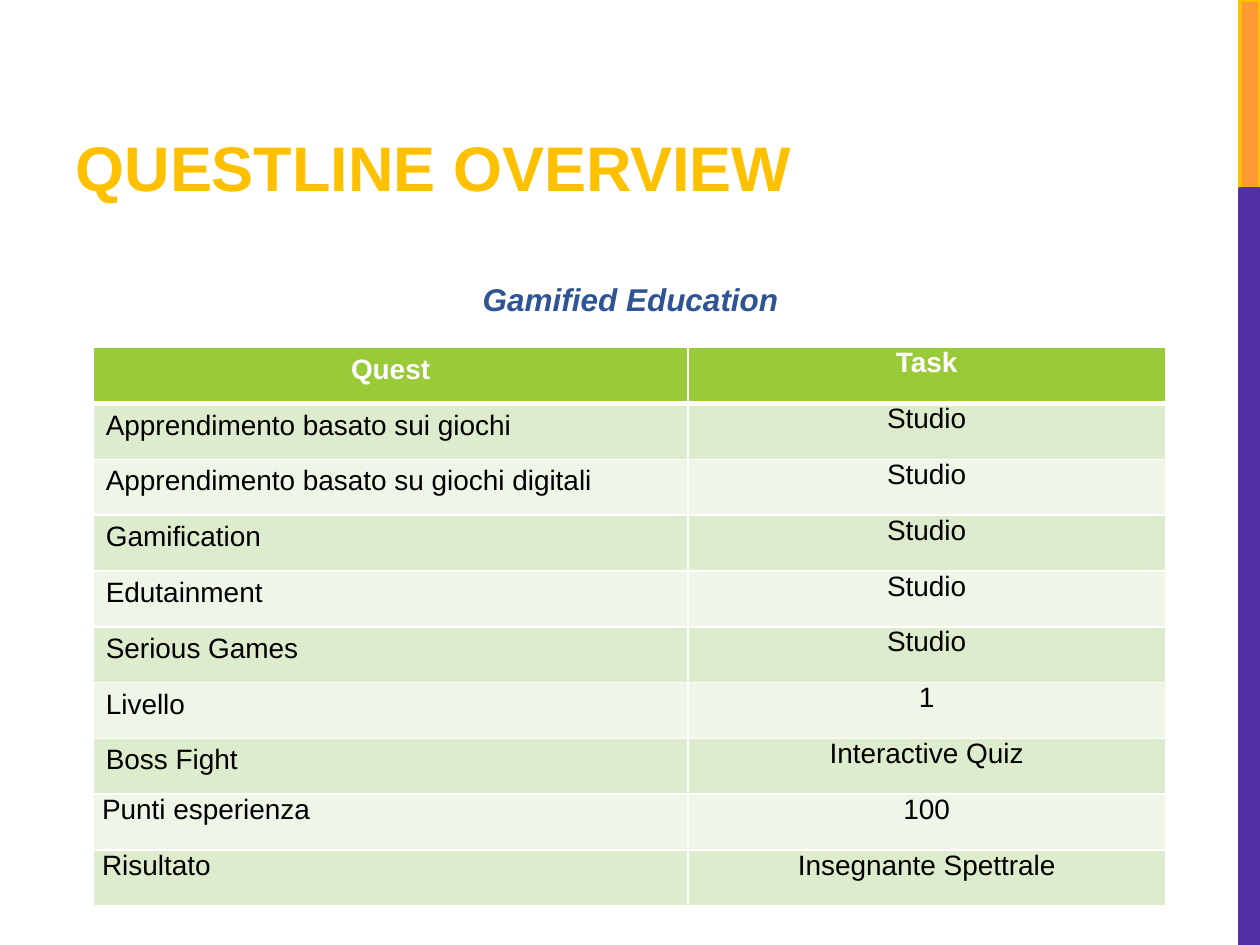
from lxml import etree
from pptx import Presentation
from pptx.dml.color import RGBColor
from pptx.enum import shapes, text
from pptx.oxml import ns
from pptx.util import Inches, Pt

FONT = "Arial"
WHITE = RGBColor(0xFF, 0xFF, 0xFF)
BLACK = RGBColor(0, 0, 0)
GOLD = RGBColor(0xFF, 0xC0, 0x00)
ORANGE = RGBColor(0xFF, 0x99, 0x33)
PURPLE = RGBColor(0x53, 0x30, 0xA5)
BLUE = RGBColor(0x2F, 0x54, 0x96)
GREEN = RGBColor(0x99, 0xCB, 0x38)
BANDS = (RGBColor(0xEF, 0xF6, 0xE7), RGBColor(0xDD, 0xEC, 0xCC))

WIDE_INSETS = (0.1, 0.05)
TIGHT_INSETS = (0.07, 0)
QUESTS = [
    ("Quest", "Task"),
    ("Apprendimento basato sui giochi", "Studio"),
    ("Apprendimento basato su giochi digitali", "Studio"),
    ("Gamification", "Studio"),
    ("Edutainment", "Studio"),
    ("Serious Games", "Studio"),
    ("Livello", "1"),
    ("Boss Fight", "Interactive Quiz"),
    ("Punti esperienza", "100"),
    ("Risultato", "Insegnante Spettrale"),
]
TIGHT_ROWS = ("Punti esperienza", "Risultato")


def add_span(para, words, size, color, bold=False, italic=False):
    span = para.add_run()
    span.text = words
    font = span.font
    font.name, font.size = FONT, Pt(size)
    font.bold, font.italic = bold, italic
    font.color.rgb = color


def set_insets(holder, insets):
    holder.margin_left = holder.margin_right = Inches(insets[0])
    holder.margin_top = holder.margin_bottom = Inches(insets[1])


def add_side_band(page, left, top, width, height):
    """Stack the orange fifth above the purple rest."""
    split = height / 5
    parts = [(top, split, ORANGE, GOLD), (top + split, height - split, PURPLE, PURPLE)]
    for part_top, part_height, fill, line in parts:
        bar = page.shapes.add_shape(
            shapes.MSO_SHAPE.RECTANGLE,
            Inches(left), Inches(part_top), Inches(width), Inches(part_height))
        bar.shadow.inherit = False
        bar.fill.solid()
        bar.fill.fore_color.rgb = fill
        bar.line.color.rgb = line
        bar.line.width = Pt(2.25)


def place_title(page, left, top, width, height):
    title = page.shapes.title
    title.left, title.top = Inches(left), Inches(top)
    title.width, title.height = Inches(width), Inches(height)
    frame = title.text_frame
    frame.vertical_anchor = text.MSO_ANCHOR.BOTTOM
    frame.auto_size = text.MSO_AUTO_SIZE.NONE
    set_insets(frame, WIDE_INSETS)
    para = frame.paragraphs[0]
    para.alignment = text.PP_ALIGN.LEFT
    add_span(para, "QUESTLINE OVERVIEW", 36, GOLD, bold=True)


def add_subtitle(page, left, top, width, height):
    box = page.shapes.add_textbox(Inches(left), Inches(top), Inches(width), Inches(height))
    frame = box.text_frame
    frame.word_wrap = True
    frame.auto_size = text.MSO_AUTO_SIZE.SHAPE_TO_FIT_TEXT
    set_insets(frame, WIDE_INSETS)
    para = frame.paragraphs[0]
    para.alignment = text.PP_ALIGN.CENTER
    para.line_spacing = 1.5
    add_span(para, "Gamified Education", 18, BLUE, bold=True, italic=True)


def set_borders(cell, widths):
    """Draw white borders; widths in points for left, right, top, bottom."""
    properties = cell._tc.get_or_add_tcPr()
    for side, width in zip("LRTB", widths):
        line = etree.SubElement(properties, ns.qn(f"a:ln{side}"), w=str(Pt(width)))
        fill = etree.SubElement(line, ns.qn("a:solidFill"))
        etree.SubElement(fill, ns.qn("a:srgbClr"), val=str(WHITE))


def add_quest_table(page, left, top, width, height):
    table = page.shapes.add_table(
        len(QUESTS), 2, Inches(left), Inches(top), Inches(width), Inches(height)).table
    quest_width = 4.72
    table.columns[0].width = Inches(quest_width)
    table.columns[1].width = Inches(width - quest_width)
    for row, entry in enumerate(QUESTS):
        table.rows[row].height = Inches(height / len(QUESTS))
        header = row == 0
        for column, words in enumerate(entry):
            cell = table.cell(row, column)
            tight = column == 1 or words in TIGHT_ROWS
            set_insets(cell, TIGHT_INSETS if tight else WIDE_INSETS)
            set_borders(cell, (1, 1, 3 if row == 1 else 1, 3 if header else 1))
            cell.fill.solid()
            cell.fill.fore_color.rgb = GREEN if header else BANDS[row % 2]
            para = cell.text_frame.paragraphs[0]
            centred = header or column == 1
            para.alignment = text.PP_ALIGN.CENTER if centred else text.PP_ALIGN.LEFT
            add_span(para, words, 16, WHITE if header else BLACK, bold=header)


def main():
    deck = Presentation()
    deck.slide_width, deck.slide_height = Inches(10), Inches(7.5)
    page = deck.slides.add_slide(deck.slide_layouts[5])
    add_side_band(page, 9.84, 0, 0.16, 7.5)
    place_title(page, 0.5, 0.17, 6.33, 1.5)
    add_quest_table(page, 0.74, 2.76, 8.51, 4.43)
    add_subtitle(page, 1.42, 2.02, 7.17, 0.51)
    deck.save("out.pptx")


if __name__ == "__main__":
    main()
